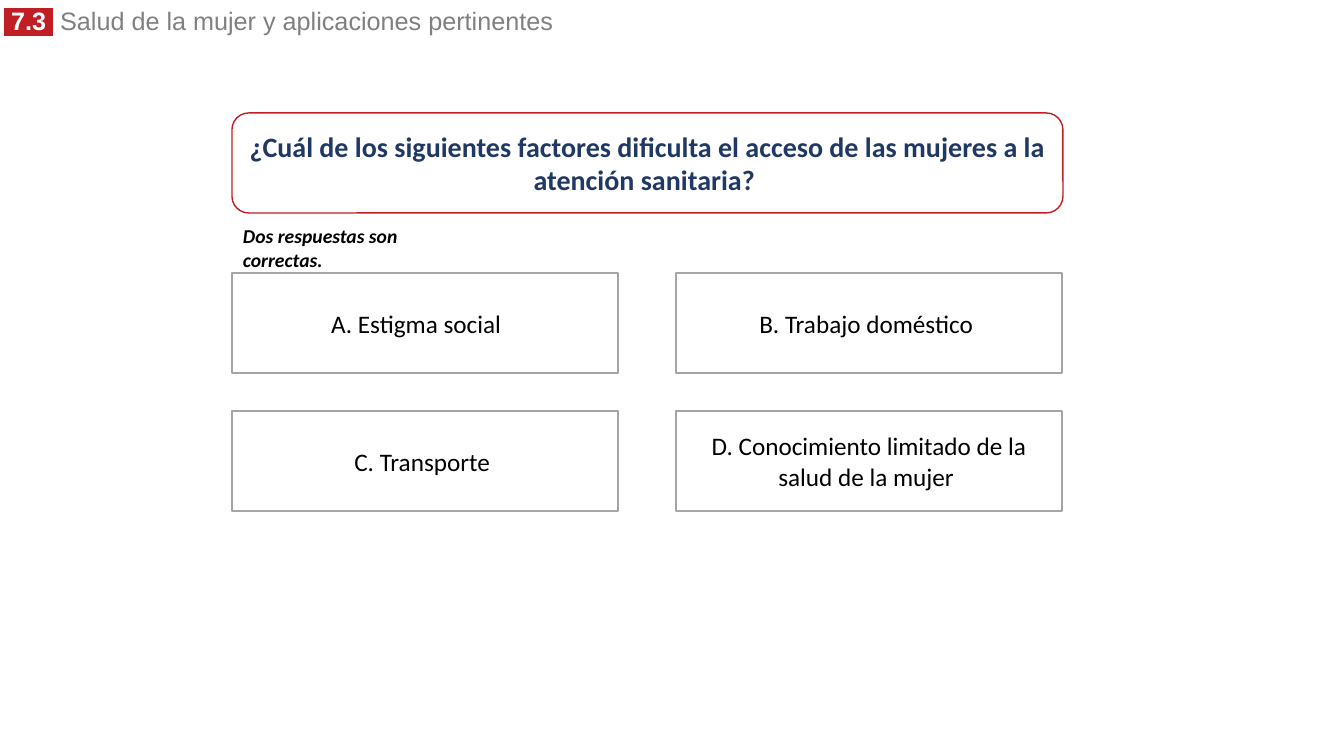
import lxml.etree
import pptx
import pptx.dml.color
import pptx.enum.shapes
import pptx.enum.text
import pptx.oxml.ns
import pptx.util

EMU_PER_PX = 914400 / 100.8
RED = "C01E24"
WHITE = "FFFFFF"
BLACK = "000000"
SHAPES = pptx.enum.shapes.MSO_SHAPE
ANCHOR = pptx.enum.text.MSO_ANCHOR
ALIGN = pptx.enum.text.PP_ALIGN


def px(length):
    return pptx.util.Emu(round(length * EMU_PER_PX))


def colour(value):
    return pptx.dml.color.RGBColor.from_string(value)


class QuizSlide:
    body_font = "Calibri"
    heading_font = "Arial"

    def __init__(self, presentation):
        self.slide = presentation.slides.add_slide(presentation.slide_layouts[5])

    def run(self, paragraph, text, size, ink, font=None, bold=False, italic=False, highlight=None):
        run = paragraph.add_run()
        run.text = text
        run.font.size = pptx.util.Pt(size)
        run.font.bold = bold
        run.font.italic = italic
        run.font.color.rgb = colour(ink)
        if highlight:
            qn = pptx.oxml.ns.qn
            marker = lxml.etree.SubElement(run.font._element, qn("a:highlight"))
            lxml.etree.SubElement(marker, qn("a:srgbClr"), val=highlight)
        run.font.name = font or self.body_font

    def heading(self, number, topic, x, y, width, height):
        title = self.slide.shapes.title
        title.left, title.top, title.width, title.height = map(px, (x, y, width, height))
        frame = title.text_frame
        frame.word_wrap = True
        frame.auto_size = pptx.enum.text.MSO_AUTO_SIZE.SHAPE_TO_FIT_TEXT
        frame.vertical_anchor = ANCHOR.TOP
        line = frame.paragraphs[0]
        line.alignment = ALIGN.LEFT
        line.line_spacing = 0.8
        self.run(line, f" {number} ", 18, WHITE, self.heading_font, bold=True, highlight=RED)
        self.run(line, f" {topic}", 18, "808080", self.heading_font)

    def card(self, preset, text, x, y, width, height, outline, size, ink, bold=False, right_inset=10):
        card = self.slide.shapes.add_shape(preset, *map(px, (x, y, width, height)))
        card.shadow.inherit = False
        card.fill.solid()
        card.fill.fore_color.rgb = colour(WHITE)
        card.line.color.rgb = colour(outline)
        card.line.width = pptx.util.Pt(1)
        frame = card.text_frame
        frame.word_wrap = True
        frame.vertical_anchor = ANCHOR.MIDDLE
        frame.margin_right = px(right_inset)
        line = frame.paragraphs[0]
        line.alignment = ALIGN.CENTER
        self.run(line, text, size, ink, bold=bold)

    def hint(self, text, x, y, width, height):
        frame = self.slide.shapes.add_textbox(*map(px, (x, y, width, height))).text_frame
        frame.word_wrap = True
        self.run(frame.paragraphs[0], text, 14, BLACK, bold=True, italic=True)


def main():
    presentation = pptx.Presentation()
    presentation.slide_width = px(1344)
    presentation.slide_height = px(756)
    quiz = QuizSlide(presentation)

    quiz.heading("7.3", "Salud de la mujer y aplicaciones pertinentes", -6, 6, 658, 34)
    quiz.card(
        SHAPES.ROUNDED_RECTANGLE,
        "¿Cuál de los siguientes factores dificulta el acceso de las mujeres a la atención sanitaria? ",
        232, 113, 831, 100, RED, 20, "203864", bold=True,
    )

    answers = [
        ("A. Estigma social ", 22),
        ("B. Trabajo doméstico ", 10),
        ("C. Transporte ", 10),
        ("D. Conocimiento limitado de la salud de la mujer ", 10),
    ]
    for index, (answer, right_inset) in enumerate(answers):
        row, column = divmod(index, 2)
        quiz.card(
            SHAPES.RECTANGLE, answer, 232 + 444 * column, 273 + 138 * row, 386, 100,
            "A5A5A5", 18, BLACK, right_inset=right_inset,
        )
    quiz.hint("Dos respuestas son correctas.", 233, 219, 226, 34)

    presentation.save("out.pptx")


if __name__ == "__main__":
    main()
